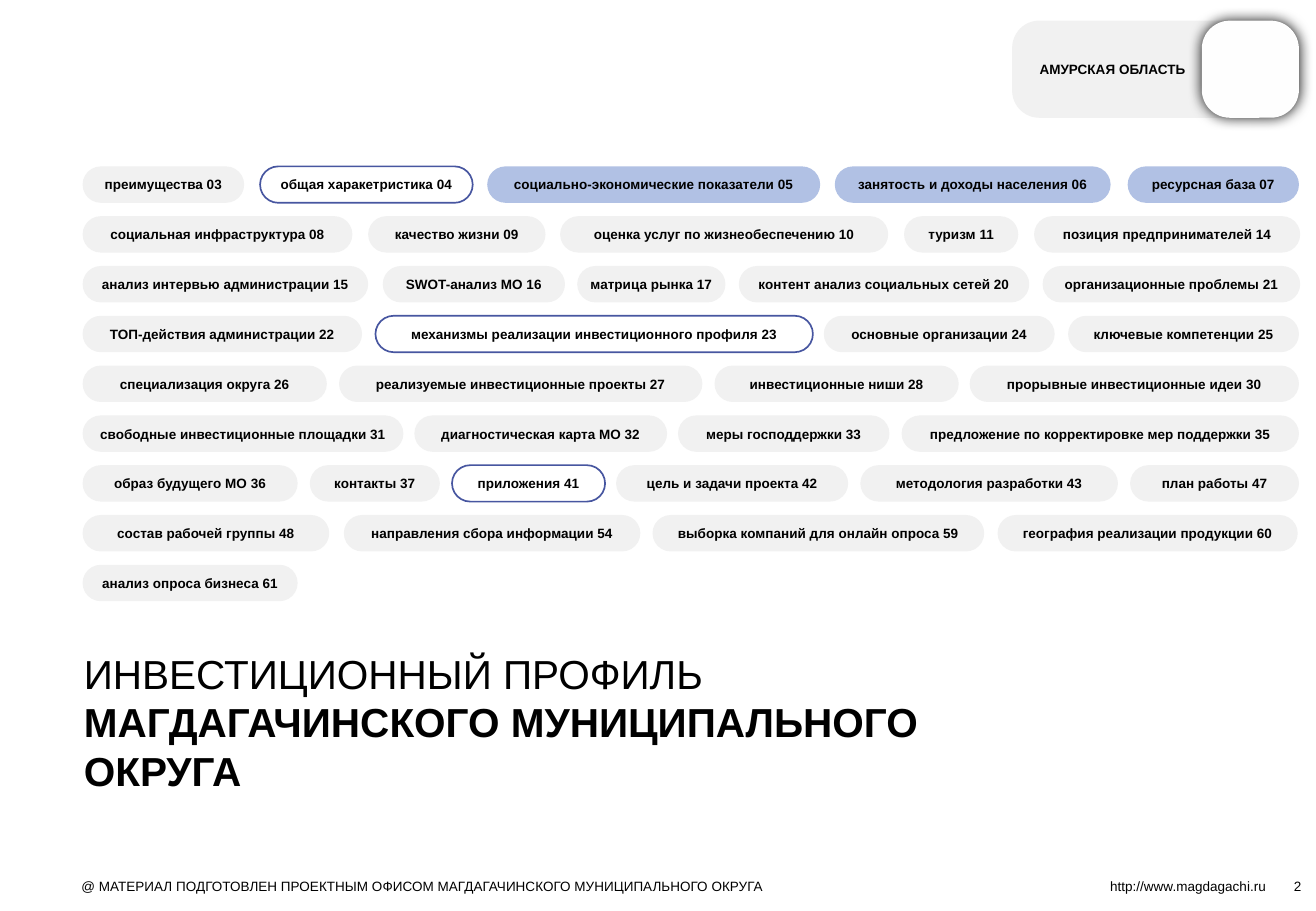
from lxml import etree
from pptx import Presentation
from pptx.dml.color import RGBColor
from pptx.enum.shapes import MSO_SHAPE as SHAPE
from pptx.enum.text import MSO_ANCHOR as ANCHOR, PP_ALIGN as ALIGN
from pptx.oxml import parse_xml
from pptx.util import Pt

PX = 9144  # 100 px to the inch
BLACK = RGBColor(0x00, 0x00, 0x00)
GREY = RGBColor(0xF1, 0xF1, 0xF1)
BLUE = RGBColor(0xB1, 0xC1, 0xE4)
OUTLINE = RGBColor(0x47, 0x56, 0xA0)
WHITE = RGBColor(0xFE, 0xFE, 0xFE)

prs = Presentation()
prs.slide_width, prs.slide_height = 1083 * PX, 750 * PX
s = prs.slides.add_slide(prs.slide_layouts[6])


def rounded(x, y, w, h, fill, radius):
    sp = s.shapes.add_shape(SHAPE.ROUNDED_RECTANGLE, x * PX, y * PX, w * PX, h * PX)
    sp.adjustments[0] = radius
    sp.shadow.inherit = False
    sp.line.fill.background()
    if fill is None:
        sp.fill.background()
    else:
        sp.fill.solid()
        sp.fill.fore_color.rgb = fill
    return sp


def write(sp, text, align, anchor, size=8, bold=None, insets=(0, 0, 0, 0)):
    tf = sp.text_frame
    tf.word_wrap = True
    tf.vertical_anchor = anchor
    tf.margin_left, tf.margin_top, tf.margin_right, tf.margin_bottom = (
        v * PX for v in insets)
    p = tf.paragraphs[0]
    p.alignment = align
    p.add_run().text = text
    p.font.name, p.font.size, p.font.bold = "Arial", Pt(size), bold
    p.font.color.rgb = BLACK
    return p


# Contents: rows of pills (left, width, label)
rows = [
    [(68, 133, "преимущества 03"), (214, 175, "общая харакетристика 04"),
     (401, 274, "социально-экономические показатели 05"),
     (687, 227, "занятость и доходы населения 06"), (928, 141, "ресурсная база 07")],
    [(68, 222, "социальная инфраструктура 08"), (303, 146, "качество жизни 09"),
     (461, 270, "оценка услуг по жизнеобеспечению 10"), (744, 94, "туризм 11"),
     (851, 219, "позиция предпринимателей 14")],
    [(68, 235, "анализ интервью администрации 15"), (315, 150, "SWOT-анализ МО 16"),
     (475, 122, "матрица рынка 17"), (608, 239, "контент анализ социальных сетей 20"),
     (858, 212, "организационные проблемы 21")],
    [(68, 230, "ТОП-действия администрации 22"),
     (309, 360, "механизмы реализации инвестиционного профиля 23"),
     (678, 190, "основные организации 24"), (879, 190, "ключевые компетенции 25")],
    [(68, 201, "специализация округа 26"),
     (279, 299, "реализуемые инвестиционные проекты 27"),
     (588, 201, "инвестиционные ниши 28"), (798, 271, "прорывные инвестиционные идеи 30")],
    [(68, 264, "свободные инвестиционные площадки 31"),
     (341, 208, "диагностическая карта МО 32"), (558, 174, "меры господдержки 33"),
     (742, 327, "предложение по корректировке мер поддержки 35")],
    [(68, 177, "образ будущего МО 36"), (255, 107, "контакты 37"),
     (372, 126, "приложения 41"), (507, 191, "цель и задачи проекта 42"),
     (708, 212, "методология разработки 43"), (930, 139, "план работы 47")],
    [(68, 203, "состав рабочей группы 48"), (283, 244, "направления сбора информации 54"),
     (537, 273, "выборка компаний для онлайн опроса 59"),
     (821, 247, "география реализации продукции 60")],
    [(68, 177, "анализ опроса бизнеса 61")],
]
fills = {"04": None, "23": None, "41": None, "05": BLUE, "06": BLUE, "07": BLUE}

for i, row in enumerate(rows):
    for x, w, label in row:
        fill = fills.get(label[-2:], GREY)
        pill = rounded(x, 137 + 41 * i, w, 30, fill, 0.5)
        if fill is None:
            pill.line.color.rgb = OUTLINE
            pill.line.width = Pt(1)
        write(pill, label, ALIGN.CENTER, ANCHOR.MIDDLE, bold=True)

# Region badge with an empty tile for the emblem
badge = rounded(833, 17, 236, 80, GREY, 0.28)
write(badge, "АМУРСКАЯ ОБЛАСТЬ", ALIGN.LEFT, ANCHOR.MIDDLE, bold=True,
      insets=(16, 5, 79, 5))
tile = rounded(989, 17, 80, 80, WHITE, 0.29)
effects = tile.element.spPr.find("{*}effectLst")
effects.append(parse_xml(
    '<a:outerShdw xmlns:a="http://schemas.openxmlformats.org/drawingml/2006/main"'
    ' blurRad="106680" algn="ctr" rotWithShape="0">'
    '<a:srgbClr val="000000"><a:alpha val="92000"/></a:srgbClr></a:outerShdw>'))

# Title
title = s.shapes.add_textbox(69 * PX, 534 * PX, 800 * PX, 121 * PX)
p = write(title, "ИНВЕСТИЦИОННЫЙ ПРОФИЛЬ ", ALIGN.LEFT, ANCHOR.TOP, size=24)
p.line_spacing = Pt(28.8)
r = p.add_run()
r.text = "МАГДАГАЧИНСКОГО МУНИЦИПАЛЬНОГО ОКРУГА"
r.font.bold = True

# Footer
footer = [
    (67, 800, ALIGN.LEFT,
     "@ МАТЕРИАЛ ПОДГОТОВЛЕН ПРОЕКТНЫМ ОФИСОМ МАГДАГАЧИНСКОГО МУНИЦИПАЛЬНОГО ОКРУГА"),
    (869, 173, ALIGN.RIGHT, "http://www.magdagachi.ru"),
    (991, 80, ALIGN.RIGHT, "2"),
]
for x, w, align, text in footer:
    box = s.shapes.add_textbox(x * PX, 723 * PX, w * PX, 13 * PX)
    write(box, text, align, ANCHOR.TOP)

prs.save("out.pptx")
